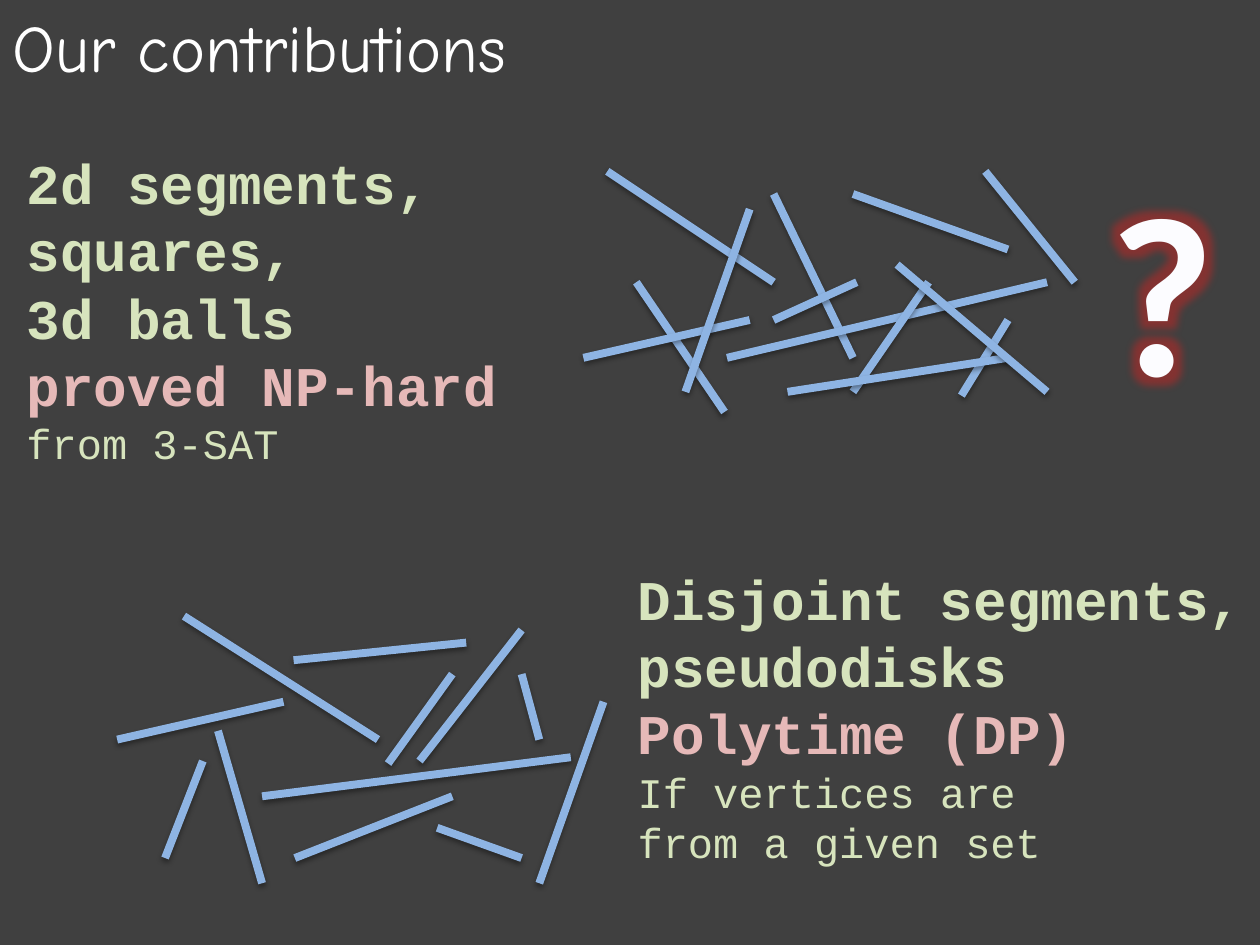
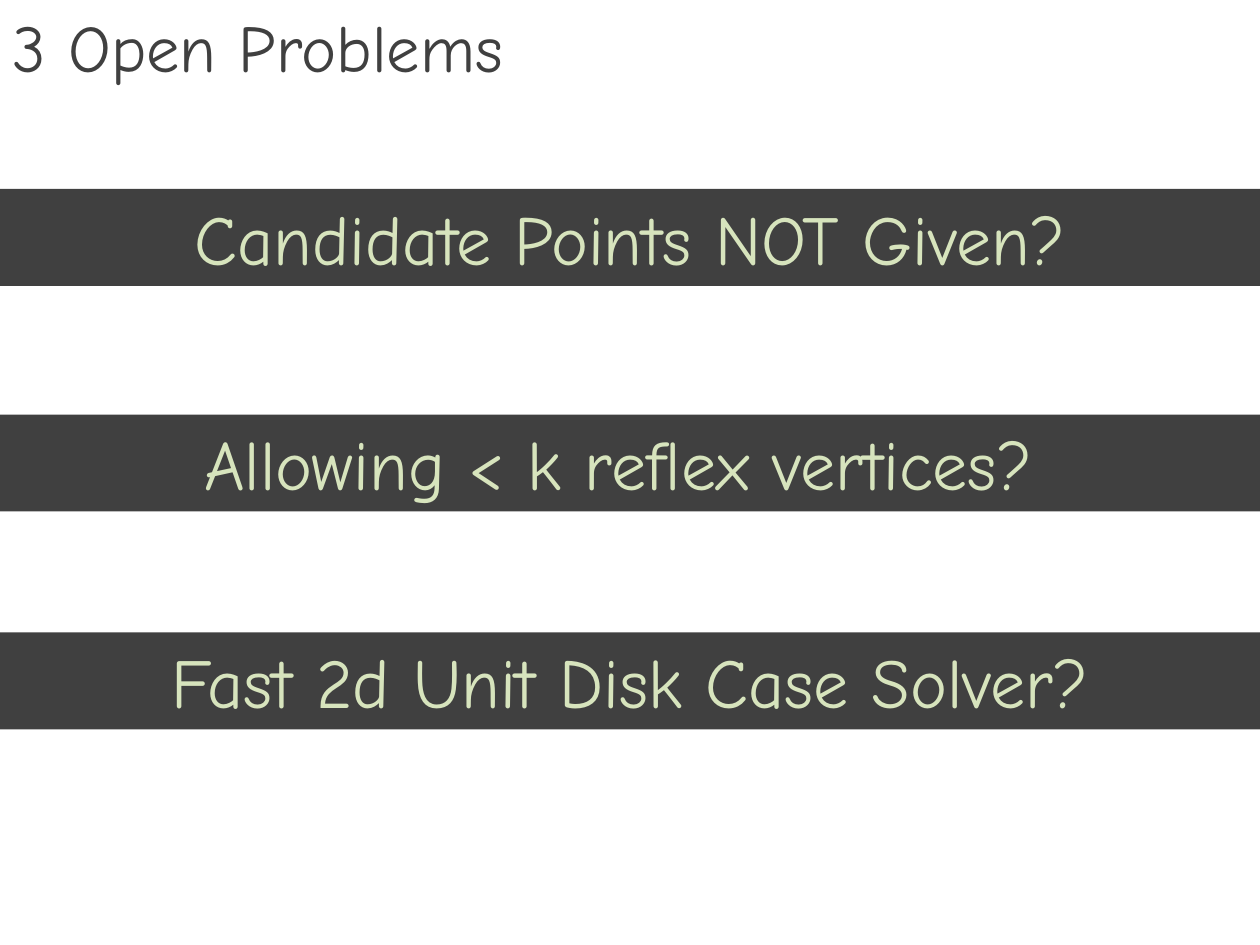
from dataclasses import dataclass

from lxml import etree
from pptx import Presentation
from pptx.dml.color import RGBColor
from pptx.enum.shapes import MSO_CONNECTOR, MSO_SHAPE
from pptx.enum.text import MSO_ANCHOR, MSO_AUTO_SIZE, PP_ALIGN
from pptx.oxml import parse_xml
from pptx.oxml.ns import nsdecls, qn
from pptx.util import Inches, Pt


@dataclass(frozen=True)
class Theme:
    dark: str = "404040"
    white: str = "FFFFFF"
    green: str = "D7E4BD"
    pink: str = "E6B9B8"
    segment: str = "8EB4E3"
    mark: str = "FCFCFF"
    glow: str = "C82624"
    hand_font: str = "Comic Neue"
    code_font: str = "Courier New"
    mark_font: str = "Calibri"
    title_size: int = 38
    band_size: int = 40
    claim_size: int = 32
    detail_size: int = 24
    mark_size: int = 130
    segment_width: float = 4.5


THEME = Theme()
TITLE_ONLY, TWO_CONTENT = 5, 3

SHADOW = (
    f'<a:effectLst {nsdecls("a")}><a:outerShdw blurRad="39370" dist="20320" dir="5400000" '
    'rotWithShape="0"><a:srgbClr val="000000"><a:alpha val="38000"/></a:srgbClr>'
    "</a:outerShdw></a:effectLst>"
)
GLOW = (
    f'<a:effectLst {nsdecls("a")}><a:glow rad="139700"><a:srgbClr val="{THEME.glow}">'
    '<a:alpha val="50000"/></a:srgbClr></a:glow></a:effectLst>'
)

# Segment end points: x1, y1, x2, y2
CROSSING_SEGMENTS = [
    (4.82, 1.36, 6.14, 2.24), (6.14, 1.54, 6.77, 2.84), (5.77, 2.84, 8.31, 2.24),
    (7.37, 2.24, 6.77, 3.11), (5.05, 2.24, 5.75, 3.27), (4.63, 2.84, 5.95, 2.54),
    (7.82, 1.36, 8.53, 2.24), (8, 2.54, 7.63, 3.14), (6.77, 1.54, 8, 1.98),
    (6.25, 3.11, 8, 2.84), (7.12, 2.1, 8.31, 3.11), (6.14, 2.54, 6.8, 2.24),
    (5.44, 3.11, 5.95, 1.66),
]
DISJOINT_SEGMENTS = [
    (0.93, 5.87, 2.25, 5.57), (1.31, 6.81, 1.61, 6.04), (1.46, 4.89, 3, 5.87),
    (2.34, 6.81, 3.59, 6.32), (2.08, 6.32, 4.53, 6.01), (4.28, 7.01, 4.79, 5.57),
    (3.33, 6.04, 4.14, 5), (3.08, 6.06, 3.59, 5.35), (2.33, 5.24, 3.7, 5.1),
    (4.28, 5.87, 4.14, 5.35), (4.14, 6.81, 3.47, 6.57), (1.73, 5.8, 2.08, 7.01),
]
OPEN_PROBLEMS = [
    (1.5, "Candidate Points NOT Given?"),
    (3.29, "Allowing < k reflex vertices? "),
    (5.02, "Fast 2d Unit Disk Case Solver?"),
]


def write(paragraph, text, *, size, color, font, bold=False, align=PP_ALIGN.LEFT):
    """Add a formatted run to the paragraph and return it."""
    paragraph.alignment = align
    paragraph.space_before = Pt(0)
    run = paragraph.add_run()
    run.text = text
    run.font.size = Pt(size)
    run.font.bold = bold
    run.font.color.rgb = RGBColor.from_string(color)
    run.font.name = font
    return run


class Deck:
    def __init__(self, theme):
        self.theme = theme
        self.presentation = Presentation()
        self.presentation.slide_width = Inches(10)
        self.presentation.slide_height = Inches(7.5)
        self.slide = None

    def new_slide(self, layout, background, title, title_color):
        self.slide = self.presentation.slides.add_slide(
            self.presentation.slide_layouts[layout])
        fill = self.slide.background.fill
        fill.solid()
        fill.fore_color.rgb = RGBColor.from_string(background)
        frame = self.place(self.slide.shapes.title, 0, 0, 9.5, 0.74)
        write(frame.paragraphs[0], title, size=self.theme.title_size,
              color=title_color, font=self.theme.hand_font)

    def place(self, shape, left, top, width, height):
        """Position a text shape and return its frame, anchored at the top."""
        shape.left, shape.top = Inches(left), Inches(top)
        shape.width, shape.height = Inches(width), Inches(height)
        frame = shape.text_frame
        frame.word_wrap = True
        frame.auto_size = MSO_AUTO_SIZE.NONE
        frame.vertical_anchor = MSO_ANCHOR.TOP
        return frame

    def result(self, index, box, claims, verdict, details):
        """Fill a body placeholder: bold claims, pink verdict, small details."""
        theme = self.theme
        frame = self.place(self.slide.placeholders[index], *box)
        lines = [(text, theme.claim_size, theme.green, True) for text in claims]
        lines.append((verdict, theme.claim_size, theme.pink, True))
        lines += [(text, theme.detail_size, theme.green, False) for text in details]
        for number, (text, size, color, bold) in enumerate(lines):
            paragraph = frame.add_paragraph() if number else frame.paragraphs[0]
            properties = paragraph._p.get_or_add_pPr()
            properties.set("marL", "0")
            properties.set("indent", "0")
            etree.SubElement(properties, qn("a:buNone"))
            write(paragraph, text, size=size, color=color, bold=bold,
                  font=theme.code_font)

    def segments(self, ends):
        for end_points in ends:
            segment = self.slide.shapes.add_connector(
                MSO_CONNECTOR.STRAIGHT, *map(Inches, end_points))
            segment.line.color.rgb = RGBColor.from_string(self.theme.segment)
            segment.line.width = Pt(self.theme.segment_width)
            segment._element.spPr.append(parse_xml(SHADOW))

    def glowing_mark(self, text, *box):
        theme = self.theme
        mark = self.slide.shapes.add_textbox(*map(Inches, box))
        run = write(self.place(mark, *box).paragraphs[0], text, size=theme.mark_size,
                    color=theme.mark, font=theme.mark_font, bold=True)
        run.font.fill._xPr.find(qn("a:solidFill")).addnext(parse_xml(GLOW))

    def band(self, top, text):
        theme = self.theme
        box = (0, top, 10, 0.77)
        band = self.slide.shapes.add_shape(MSO_SHAPE.RECTANGLE, *map(Inches, box))
        band.shadow.inherit = False
        band.fill.solid()
        band.fill.fore_color.rgb = RGBColor.from_string(theme.dark)
        band.line.fill.background()
        write(self.place(band, *box).paragraphs[0], text, size=theme.band_size,
              color=theme.green, font=theme.hand_font, align=PP_ALIGN.CENTER)


def main():
    deck = Deck(THEME)

    # Contributions: hard cases above, polynomial cases below
    deck.new_slide(TWO_CONTENT, THEME.dark, "Our contributions", THEME.white)
    deck.result(1, (0.11, 1.13, 4.25, 2.66), ["2d segments,", "squares,", "3d balls"],
                "proved NP-hard", ["from 3-SAT"])
    deck.segments(CROSSING_SEGMENTS)
    deck.glowing_mark("?", 8.71, 1.13, 1.05, 2.29)
    deck.result(2, (4.96, 4.43, 5.22, 2.52), ["Disjoint segments,", "pseudodisks"],
                "Polytime (DP)", ["If vertices are", "from a given set"])
    deck.segments(DISJOINT_SEGMENTS)

    # Open problems: one full-width band each
    deck.new_slide(TITLE_ONLY, THEME.white, "3 Open Problems", THEME.dark)
    for top, problem in OPEN_PROBLEMS:
        deck.band(top, problem)

    deck.presentation.save("out.pptx")


if __name__ == "__main__":
    main()
